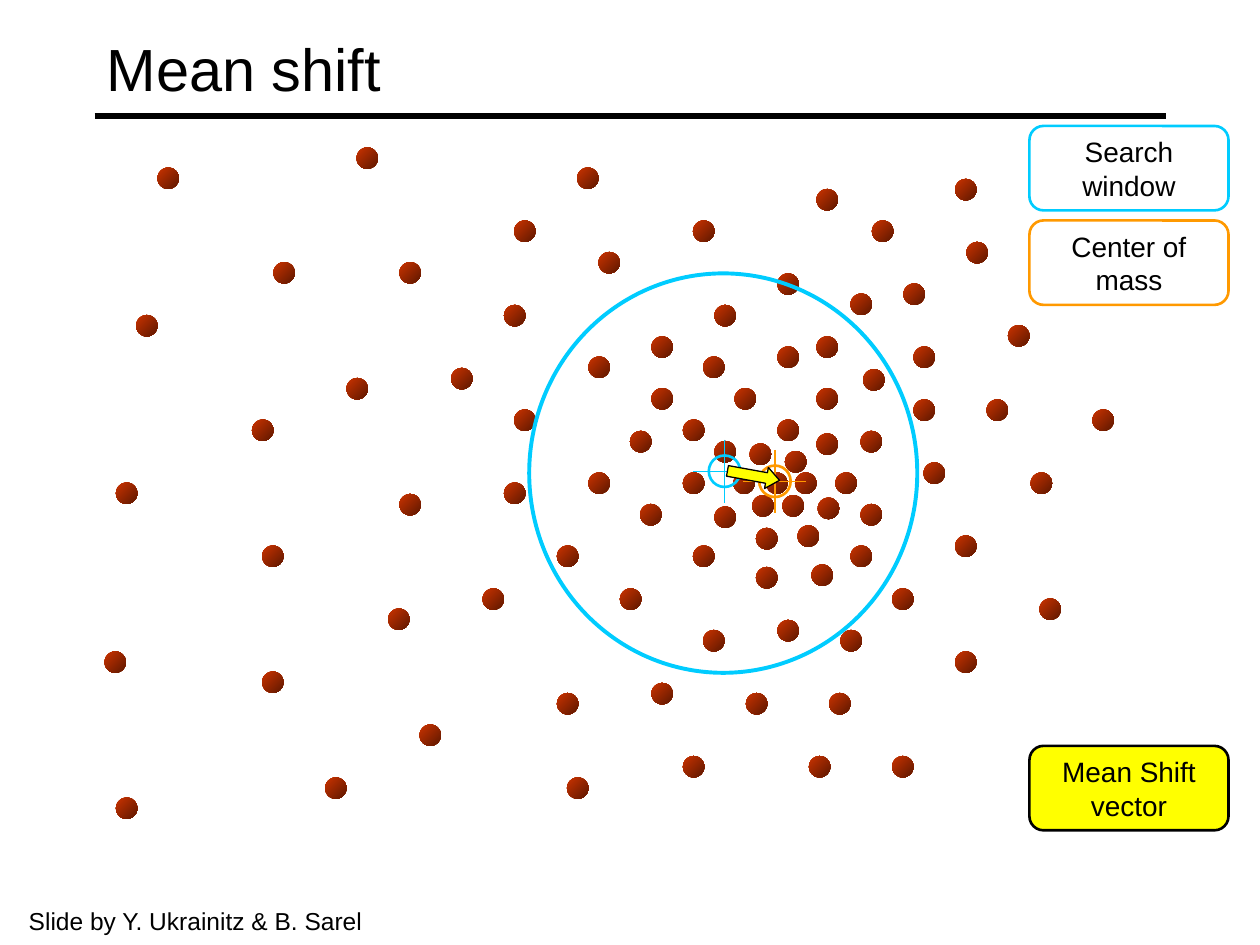
import pptx
import pptx.dml.color
import pptx.enum.shapes
import pptx.enum.text
import pptx.oxml.ns
import pptx.util
from lxml import etree

PX = 9144  # 100 px to the inch
SHAPE = pptx.enum.shapes.MSO_SHAPE
ALIGN = pptx.enum.text.PP_ALIGN
ANCHOR = pptx.enum.text.MSO_ANCHOR
COLORS = {
    "black": "000000",
    "window": "00CCFF",
    "mass": "FF9900",
    "vector": "FFFF00",
    "dot_light": "CC3300",
    "dot_dark": "5E1800",
}
DOT = 17
# Top left corners of the dots, relative to the plot box
DOTS = [
    (608, 275), (631, 275), (623, 258), (595, 252), (621, 293), (597, 293),
    (649, 295), (582, 275), (663, 275), (648, 244), (617, 233), (633, 317),
    (600, 319), (567, 302), (542, 275), (567, 250), (683, 300), (675, 333),
    (644, 348), (600, 350), (550, 333), (508, 300), (500, 242), (542, 233),
    (583, 208), (648, 208), (617, 175), (517, 208), (558, 183), (617, 117),
    (567, 142), (648, 167), (648, 50), (675, 133), (685, 193), (683, 242),
    (725, 217), (725, 175), (717, 125), (692, 75), (758, 42), (767, 92),
    (800, 158), (733, 267), (783, 217), (867, 225), (758, 325), (818, 275),
    (708, 367), (825, 375), (758, 417), (667, 400), (617, 392), (658, 450),
    (708, 500), (642, 500), (592, 450), (558, 400), (492, 367), (517, 442),
    (542, 500), (450, 517), (442, 450), (383, 367), (442, 333), (467, 275),
    (408, 225), (467, 183), (517, 167), (475, 100), (550, 75), (458, 33),
    (408, 75), (400, 142), (358, 192), (400, 283), (317, 292), (308, 383),
    (333, 475), (258, 517), (208, 433), (208, 333), (275, 200), (317, 108),
    (217, 108), (200, 233), (83, 417), (92, 533), (92, 283), (108, 150),
    (125, 33), (283, 17),
]


def px(*lengths):
    return [round(length * PX) for length in lengths]


def rgb(name):
    return pptx.dml.color.RGBColor.from_string(COLORS[name])


def add_outline(shapes, kind, box, line=None, width=1.5, fill=None):
    shape = shapes.add_shape(kind, *px(*box))
    shape.shadow.inherit = False
    if fill:
        shape.fill.solid()
        shape.fill.fore_color.rgb = rgb(fill)
    else:
        shape.fill.background()
    if line:
        shape.line.color.rgb = rgb(line)
        shape.line.width = pptx.util.Pt(width)
    else:
        shape.line.fill.background()
    return shape


def add_line(shapes, start, end, color, width):
    line = shapes.add_connector(
        pptx.enum.shapes.MSO_CONNECTOR.STRAIGHT, *px(*start, *end))
    line.line.color.rgb = rgb(color)
    line.line.width = pptx.util.Pt(width)
    properties = line._element.spPr
    etree.SubElement(properties, pptx.oxml.ns.qn("a:effectLst"))


def write_text(shape, paragraphs, size, align=ALIGN.LEFT, anchor=ANCHOR.TOP, wrap=False):
    """Fill a shape with paragraphs; a vertical tab is a line break."""
    frame = shape.text_frame
    frame.word_wrap = wrap
    frame.vertical_anchor = anchor
    for index, text in enumerate(paragraphs):
        para = frame.add_paragraph() if index else frame.paragraphs[0]
        para.text = text
        para.alignment = align
        for span in para.runs:
            span.font.name = "Arial"
            span.font.size = pptx.util.Pt(size)
            span.font.color.rgb = rgb("black")


def add_heading(page, box):
    left, top, width, height = box
    title = page.shapes.add_textbox(*px(*box))
    write_text(title, ["Mean shift"], 34, anchor=ANCHOR.MIDDLE, wrap=True)
    rule = top + height - 8
    add_line(page.shapes, (left, rule), (left + width, rule), "black", 3)


def add_dots(page, box):
    left, top = box[:2]
    for x, y in DOTS:
        dot = add_outline(page.shapes, SHAPE.OVAL, (left + x, top + y, DOT, DOT))
        dot.fill.gradient()
        dot.fill.gradient_angle = 315
        for stop, color in zip(dot.fill.gradient_stops, ("dot_light", "dot_dark")):
            stop.color.rgb = rgb(color)


def add_target(shapes, x, y, color):
    """Ring with crosshair, centred on x, y."""
    ring, arm = 25, 25
    add_outline(shapes, SHAPE.OVAL, (x - ring / 2, y - ring / 2, ring, ring), color)
    add_line(shapes, (x, y - arm), (x, y + arm), color, 0.75)
    add_line(shapes, (x - arm, y), (x + arm, y), color, 0.75)


def add_search(page, box):
    """Search window, its centre, the centre of mass and the shift between them."""
    left, top = box[:2]
    window = page.shapes.add_group_shape().shapes
    add_outline(window, SHAPE.OVAL, box, "window", 2.25)
    add_target(window, left + 155, top + 157, "window")
    add_target(page.shapes.add_group_shape().shapes, left + 195, top + 165, "mass")
    arrow = add_outline(page.shapes, SHAPE.RIGHT_ARROW,
                        (left + 157, top + 152, 42, 17), "black", 0.75, "vector")
    arrow.adjustments[1] = 0.62
    arrow.rotation = 10.3


def add_legend(page, box):
    left, top, width = box[:3]
    entries = [
        (0, ["Search\vwindow"], "window", None),
        (75, ["Center of", "mass"], "mass", None),
        (492, ["Mean Shift", "vector"], "black", "vector"),
    ]
    for offset, paragraphs, line, fill in entries:
        label = add_outline(page.shapes, SHAPE.ROUNDED_RECTANGLE,
                            (left, top + offset, width, 67), line, fill=fill)
        write_text(label, paragraphs, 16, ALIGN.CENTER, ANCHOR.MIDDLE)


def add_credit(page, box):
    credit = page.shapes.add_textbox(*px(*box))
    write_text(credit, ["Slide by Y. Ukrainitz & B. Sarel"], 14)


def main():
    deck = pptx.Presentation()
    deck.slide_width, deck.slide_height = px(1000, 750)
    page = deck.slides.add_slide(deck.slide_layouts[6])
    add_heading(page, (75, 8, 850, 92))
    add_dots(page, (0, 100, 1000, 550))
    add_search(page, (420, 217, 308, 317))
    add_legend(page, (817, 100, 158, 559))
    add_credit(page, (13, 714, 287, 33))
    deck.save("out.pptx")


if __name__ == "__main__":
    main()
